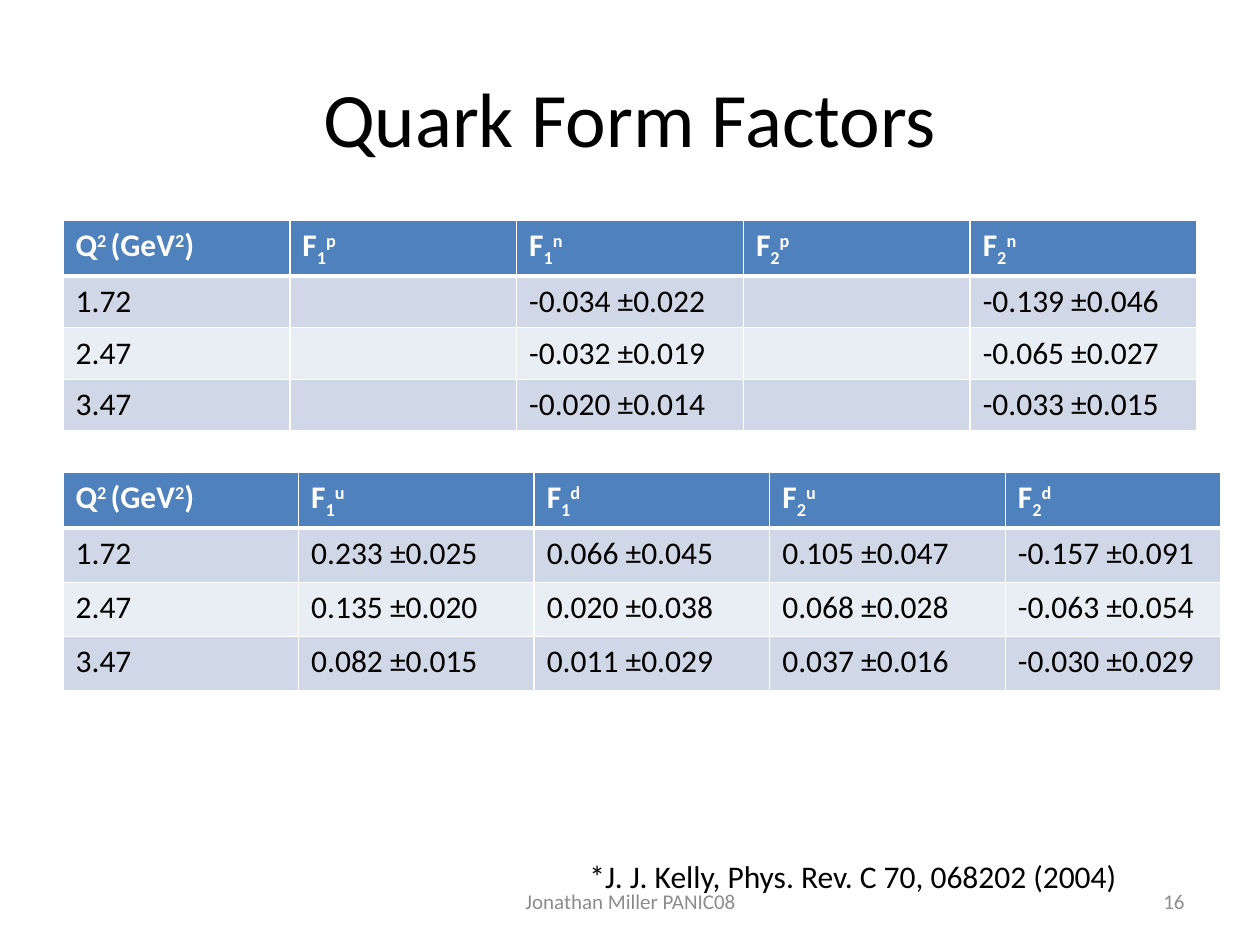
import dataclasses

import lxml.etree
import pptx
import pptx.dml.color
import pptx.enum.text
import pptx.oxml.ns
import pptx.util

Inches = pptx.util.Inches
Align = pptx.enum.text.PP_ALIGN
Anchor = pptx.enum.text.MSO_ANCHOR


@dataclasses.dataclass(frozen=True)
class Theme:
    font: str = "Calibri"
    ink: str = "000000"
    muted: str = "8C8C8C"
    paper: str = "FFFFFF"
    header: str = "4F81BD"
    bands: tuple = ("D0D8E8", "E9EDF4")
    title_size: int = 44
    body_size: int = 18
    footer_size: int = 12
    rule: int = 1
    header_rule: int = 3
    superscript: int = 30
    subscript: int = -25


class SlideBuilder:
    """Draws text and tables on one slide in a single theme."""

    def __init__(self, slide, theme):
        self.slide = slide
        self.theme = theme

    def style(self, paragraph, size, color, bold=False, align=Align.LEFT):
        paragraph.alignment = align
        font = paragraph.font
        font.name = self.theme.font
        font.size = pptx.util.Pt(size)
        font.bold = bold
        font.color.rgb = pptx.dml.color.RGBColor.from_string(color)

    def text(self, words, box, size, color, align=Align.LEFT, anchor=Anchor.MIDDLE, wrap=True):
        frame = self.slide.shapes.add_textbox(*map(Inches, box)).text_frame
        frame.word_wrap = wrap
        frame.vertical_anchor = anchor
        if not wrap:
            frame.auto_size = pptx.enum.text.MSO_AUTO_SIZE.SHAPE_TO_FIT_TEXT
        paragraph = frame.paragraphs[0]
        paragraph.add_run().text = words
        self.style(paragraph, size, color, align=align)

    def borders(self, cell, top, bottom):
        properties = cell._tc.get_or_add_tcPr()
        qn = pptx.oxml.ns.qn
        widths = {"lnL": self.theme.rule, "lnR": self.theme.rule, "lnT": top, "lnB": bottom}
        for side, width in widths.items():
            line = lxml.etree.SubElement(properties, qn(f"a:{side}"), w=str(pptx.util.Pt(width)))
            fill = lxml.etree.SubElement(line, qn("a:solidFill"))
            lxml.etree.SubElement(fill, qn("a:srgbClr"), val=self.theme.paper)

    def cell(self, cell, pieces, row):
        theme = self.theme
        is_header = row == 0
        paragraph = cell.text_frame.paragraphs[0]
        for words, baseline in pieces:
            run = paragraph.add_run()
            run.text = words
            if baseline:
                run._r.get_or_add_rPr().set("baseline", str(baseline * 1000))
        self.style(paragraph, theme.body_size, theme.paper if is_header else theme.ink, is_header)
        self.borders(
            cell,
            top=theme.header_rule if row == 1 else theme.rule,
            bottom=theme.header_rule if is_header else theme.rule,
        )
        background = theme.header if is_header else theme.bands[(row - 1) % 2]
        cell.fill.solid()
        cell.fill.fore_color.rgb = pptx.dml.color.RGBColor.from_string(background)

    def table(self, factors, measurements, left, top, widths, heights):
        up, down = self.theme.superscript, self.theme.subscript
        momentum = [("Q", 0), ("2 ", up), ("(GeV", 0), ("2", up), (")", 0)]
        header = [momentum] + [[("F", 0), (order, down), (kind, up)] for order, kind in factors]
        body = [[[(value, 0)] if value else [] for value in row] for row in measurements]
        rows = [header] + body
        box = (left, top, sum(widths), sum(heights))
        grid = self.slide.shapes.add_table(len(rows), len(widths), *map(Inches, box)).table
        for column, width in zip(grid.columns, widths):
            column.width = Inches(width)
        for line, height in zip(grid.rows, heights):
            line.height = Inches(height)
        for r, row in enumerate(rows):
            for c, pieces in enumerate(row):
                self.cell(grid.cell(r, c), pieces, r)


def main():
    deck = pptx.Presentation()
    deck.slide_width, deck.slide_height = Inches(10), Inches(7.5)
    theme = Theme()
    builder = SlideBuilder(deck.slides.add_slide(deck.slide_layouts[6]), theme)

    builder.text("Quark Form Factors", (0.5, 0.3, 9, 1.25), theme.title_size, theme.ink, Align.CENTER)

    quark_values = [
        ("1.72", "0.233 ±0.025", "0.066 ±0.045", "0.105 ±0.047", "-0.157 ±0.091"),
        ("2.47", "0.135 ±0.020", "0.020 ±0.038", "0.068 ±0.028", "-0.063 ±0.054"),
        ("3.47", "0.082 ±0.015", "0.011 ±0.029", "0.037 ±0.016", "-0.030 ±0.029"),
    ]
    builder.table(("1u", "1d", "2u", "2d"), quark_values, 0.5, 3.75,
                  [1.87] * 4 + [1.71], [0.38] + [0.43] * 3)

    builder.text("*J. J. Kelly, Phys. Rev. C 70, 068202 (2004)", (4.58, 6.75, 4.43, 0.4),
                 theme.body_size, theme.ink, anchor=Anchor.TOP, wrap=False)
    builder.text("16", (7.17, 6.95, 2.33, 0.4), theme.footer_size, theme.muted, Align.RIGHT)
    builder.text("Jonathan Miller PANIC08", (3.42, 6.95, 3.17, 0.4),
                 theme.footer_size, theme.muted, Align.CENTER)

    nucleon_values = [
        ("1.72", "", "-0.034 ±0.022", "", "-0.139 ±0.046"),
        ("2.47", "", "-0.032 ±0.019", "", "-0.065 ±0.027"),
        ("3.47", "", "-0.020 ±0.014", "", "-0.033 ±0.015"),
    ]
    builder.table(("1p", "1n", "2p", "2n"), nucleon_values, 0.5, 1.75, [1.8] * 5, [0.41] * 4)

    deck.save("out.pptx")


if __name__ == "__main__":
    main()
